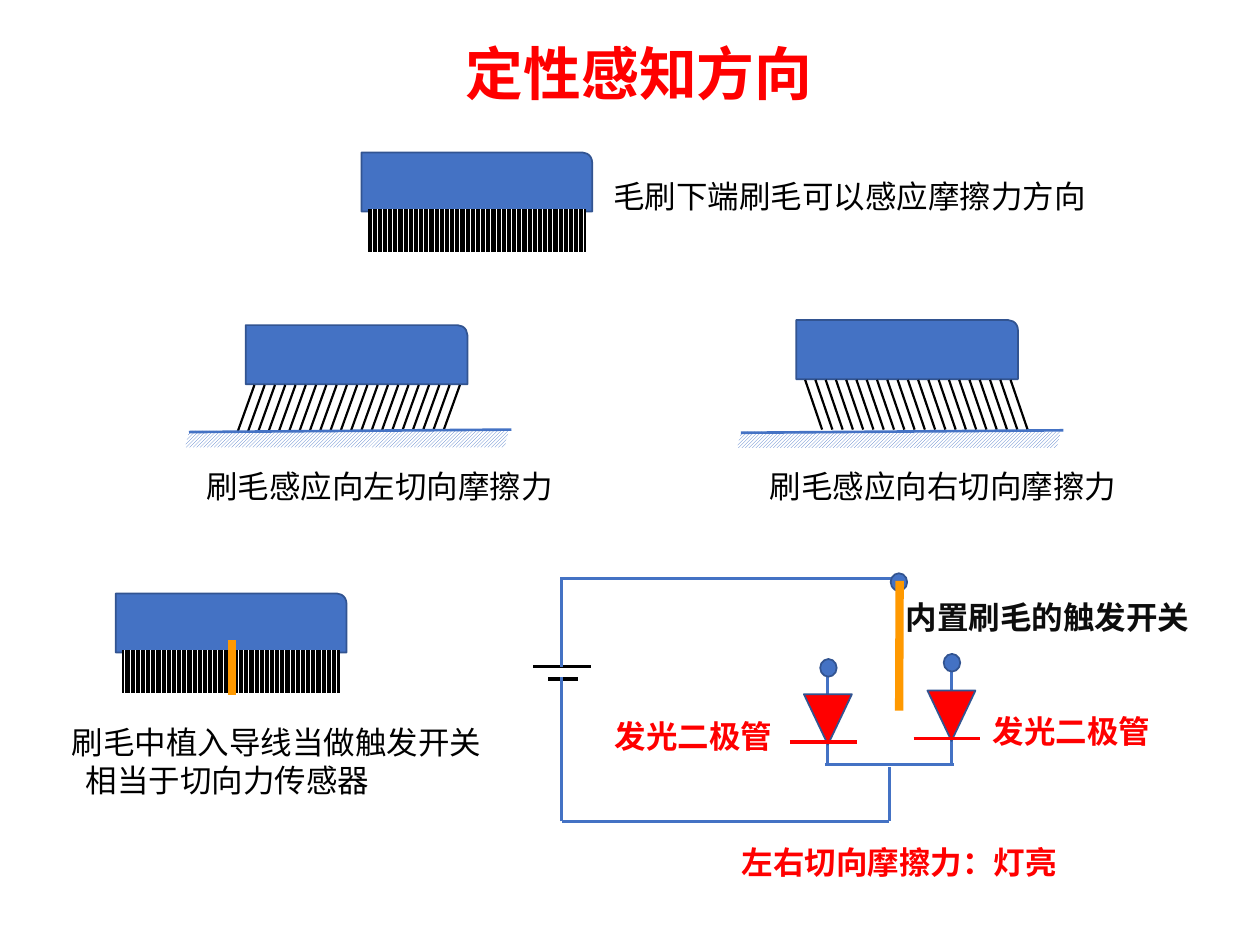
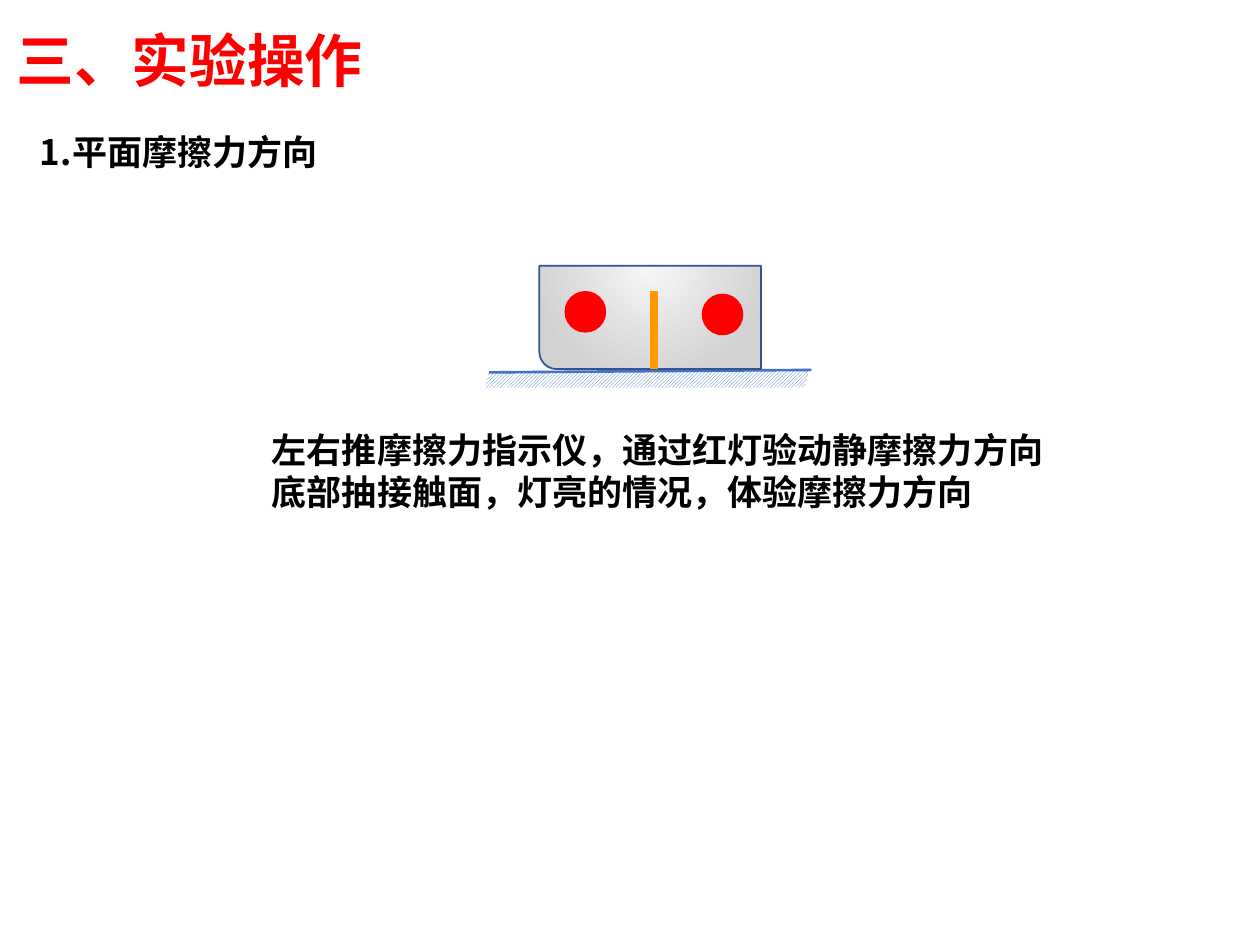
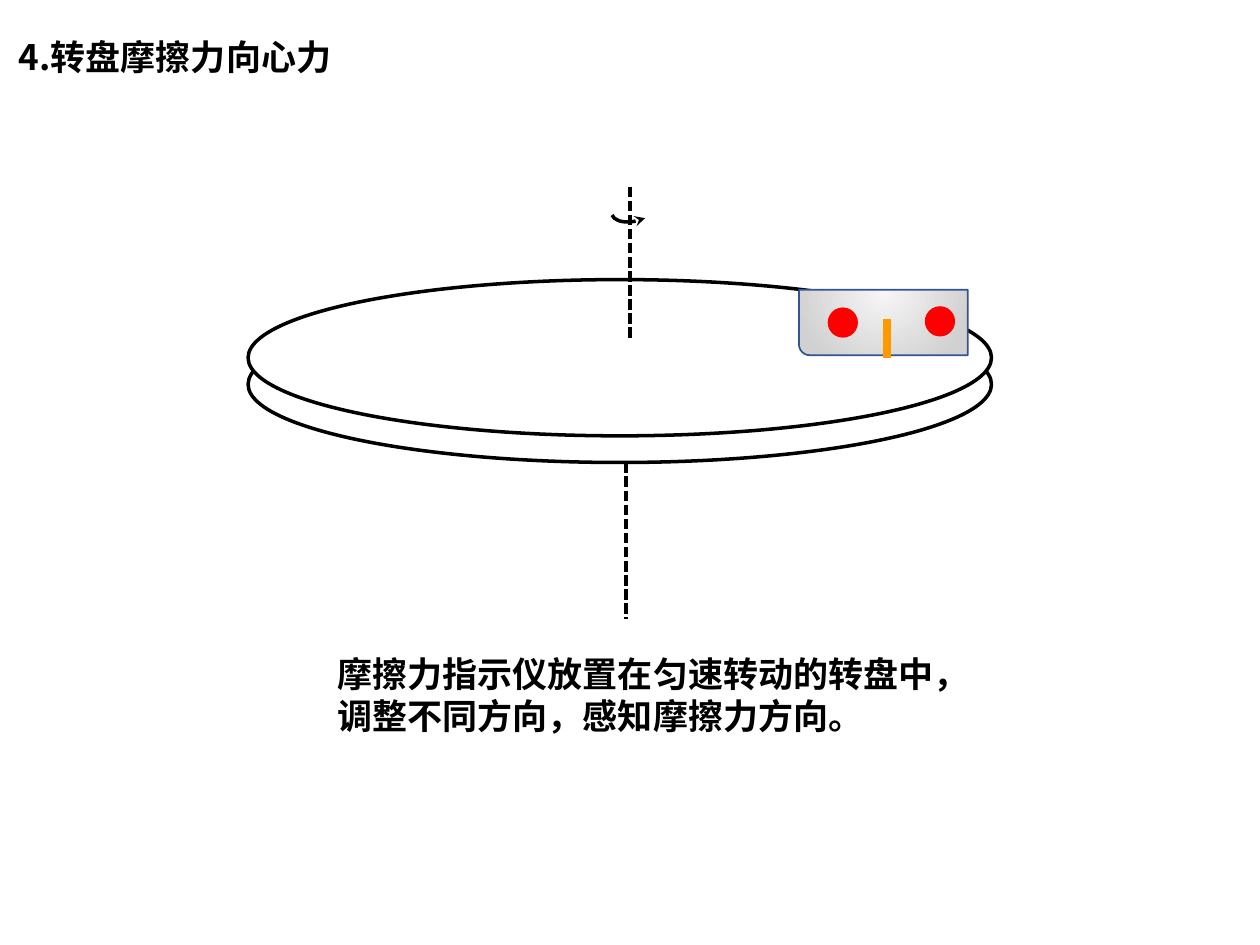
"""Build three slides on sensing the direction of friction."""

from dataclasses import dataclass

from lxml.etree import SubElement
from pptx import Presentation
from pptx.dml.color import RGBColor
from pptx.enum.dml import MSO_LINE, MSO_PATTERN
from pptx.enum.shapes import MSO_CONNECTOR, MSO_SHAPE
from pptx.enum.text import MSO_ANCHOR, MSO_AUTO_SIZE
from pptx.oxml.ns import qn
from pptx.shapes.autoshape import Shape
from pptx.shapes.connector import Connector
from pptx.slide import Slide
from pptx.util import Pt

BLUE = RGBColor(0x44, 0x72, 0xC4)
NAVY = RGBColor(0x32, 0x54, 0x91)
RED = RGBColor(0xFF, 0x00, 0x00)
ORANGE = RGBColor(0xFF, 0x99, 0x00)
BLACK = RGBColor(0x00, 0x00, 0x00)
INK = RGBColor(0x0D, 0x0D, 0x0D)
WHITE = RGBColor(0xFF, 0xFF, 0xFF)
LIGHT = RGBColor(0xF6, 0xF6, 0xF6)
GREY = RGBColor(0xD2, 0xD1, 0xD1)
FONT = "Noto Sans CJK SC"


@dataclass(frozen=True)
class Box:
    left: float
    top: float
    width: float
    height: float


@dataclass(frozen=True)
class Label:
    box: Box
    lines: tuple[str, ...]
    size: float = 18
    color: RGBColor = BLACK
    bold: bool = False
    wrap: bool = False
    indent: float = 0


@dataclass(frozen=True)
class Wire:
    x1: float
    y1: float
    x2: float
    y2: float
    color: RGBColor = BLUE
    width: float = 1.75


@dataclass(frozen=True)
class Bent:
    body: Box
    first: float
    foot: float
    lean: float


@dataclass(frozen=True)
class Meter:
    body: Box
    wire: Wire
    lamps: tuple[tuple[float, float], ...]
    lamp: float


def add_shape(slide: Slide, kind: MSO_SHAPE, box: Box, fill: RGBColor | None = None,
              line: RGBColor | None = None, width: float = 1, turn: float = 0) -> Shape:
    shape = slide.shapes.add_shape(
        kind, Pt(box.left), Pt(box.top), Pt(box.width), Pt(box.height))
    shape.shadow.inherit = False
    shape.rotation = turn
    if fill is None:
        shape.fill.background()
    else:
        shape.fill.solid()
        shape.fill.fore_color.rgb = fill
    if line is None:
        shape.line.fill.background()
    else:
        shape.line.color.rgb = line
        shape.line.width = Pt(width)
    return shape


def add_hatch(slide: Slide, kind: MSO_SHAPE, box: Box,
              pattern: MSO_PATTERN, color: RGBColor) -> None:
    fill = add_shape(slide, kind, box).fill
    fill.patterned()
    fill.pattern = pattern
    fill.fore_color.rgb = color
    fill.back_color.rgb = WHITE


def add_wire(slide: Slide, wire: Wire) -> Connector:
    line = slide.shapes.add_connector(
        MSO_CONNECTOR.STRAIGHT, Pt(wire.x1), Pt(wire.y1), Pt(wire.x2), Pt(wire.y2))
    line.line.color.rgb = wire.color
    line.line.width = Pt(wire.width)
    SubElement(line._element.spPr, qn("a:effectLst"))
    return line


def add_label(slide: Slide, label: Label) -> Shape:
    box = label.box
    shape = slide.shapes.add_textbox(
        Pt(box.left), Pt(box.top), Pt(box.width), Pt(box.height))
    frame = shape.text_frame
    frame.word_wrap = label.wrap
    frame.auto_size = MSO_AUTO_SIZE.SHAPE_TO_FIT_TEXT
    for i, line in enumerate(label.lines):
        para = frame.add_paragraph() if i else frame.paragraphs[0]
        if i and label.indent:
            para._p.get_or_add_pPr().set("marL", str(Pt(label.indent)))
        run = para.add_run()
        run.text = line
        run.font.size = Pt(label.size)
        run.font.bold = label.bold
        run.font.color.rgb = label.color
        run.font.name = FONT
        SubElement(run._r.get_or_add_rPr(), qn("a:ea"), typeface=FONT)
    return shape


def add_title(slide: Slide, text: str, left: float, top: float, width: float) -> None:
    box = Box(left, top, width, 82.8)
    frame = add_label(slide, Label(box, (text,), 33, RED, True, True)).text_frame
    frame.auto_size = MSO_AUTO_SIZE.NONE
    frame.vertical_anchor = MSO_ANCHOR.MIDDLE
    frame.paragraphs[0].line_spacing = 0.9


def add_head(slide: Slide, text: str, left: float, top: float) -> None:
    add_label(slide, Label(Box(left, top, 275.8, 31.7), (text,), 20, BLACK, True, True))


def add_brush(slide: Slide, left: float, top: float) -> None:
    add_shape(slide, MSO_SHAPE.ROUND_1_RECTANGLE,
              Box(left, top, 131.8, 33.8), BLUE, NAVY)
    add_hatch(slide, MSO_SHAPE.FLOWCHART_PROCESS,
              Box(left + 3.6, top + 32.4, 124.6, 24.5), MSO_PATTERN.DARK_VERTICAL, BLACK)


def add_bent(slide: Slide, bent: Bent) -> None:
    add_shape(slide, MSO_SHAPE.ROUND_1_RECTANGLE, bent.body, BLUE, NAVY)
    top = bent.body.top + bent.body.height + 0.4
    for i in range(21):
        x = bent.first + 5.87 * i
        add_wire(slide, Wire(x, top, x + bent.lean, bent.foot, BLACK, 1.25))


def add_floor(slide: Slide, left: float, top: float) -> None:
    add_hatch(slide, MSO_SHAPE.PARALLELOGRAM, Box(left, top, 185, 9.4),
              MSO_PATTERN.LIGHT_UPWARD_DIAGONAL, BLUE)
    add_wire(slide, Wire(left + 2.2, top + 0.7, left + 186.5, top - 0.7, BLUE, 1.5))


def add_node(slide: Slide, left: float, top: float) -> None:
    add_shape(slide, MSO_SHAPE.OVAL, Box(left, top, 9.4, 10.1), BLUE, NAVY)


def add_diode(slide: Slide, left: float, top: float) -> None:
    add_shape(slide, MSO_SHAPE.ISOSCELES_TRIANGLE,
              Box(left, top, 27.4, 28.8), RED, NAVY, turn=180)
    y = top + 27.4
    add_wire(slide, Wire(left - 8, y, left + 30.2, y, RED, 2.25))


def add_meter(slide: Slide, meter: Meter) -> None:
    body = add_shape(slide, MSO_SHAPE.ROUND_1_RECTANGLE, meter.body, GREY, NAVY, turn=180)
    body.fill.gradient()
    for stop, color, place in zip(body.fill.gradient_stops, (LIGHT, GREY), (0, 1)):
        stop.color.rgb = color
        stop.position = place
    grad = body._element.spPr.find(qn("a:gradFill"))
    grad.set("rotWithShape", "0")
    grad.remove(grad.find(qn("a:lin")))
    ring = SubElement(grad, qn("a:path"), path="circle")
    SubElement(ring, qn("a:fillToRect"), l="43000", t="0", r="43000", b="100000")
    add_wire(slide, meter.wire)
    for left, top in meter.lamps:
        add_shape(slide, MSO_SHAPE.OVAL, Box(left, top, meter.lamp, meter.lamp), RED)


def add_axis(slide: Slide, x: float, top: float, foot: float) -> None:
    line = add_wire(slide, Wire(x, top, x, foot, BLACK, 2))
    line.line.dash_style = MSO_LINE.SQUARE_DOT


def draw_sense(slide: Slide) -> None:
    add_title(slide, "定性感知方向", 259.2, 2.2, 235.4)
    add_brush(slide, 206.6, 87.1)
    add_bent(slide, Bent(Box(140.4, 185.8, 126.7, 33.8), 145.4, 247, -9.7))
    add_bent(slide, Bent(Box(455, 182.9, 126.7, 33.8), 460.1, 245.5, 9.7))
    add_floor(slide, 105.8, 246.2)
    add_floor(slide, 421.2, 246.6)
    add_brush(slide, 66.2, 339.1)
    wires = (
        Wire(132.5, 365.8, 132.5, 397.4, ORANGE, 4.75),
        Wire(304.6, 380.9, 337.7, 380.9, BLACK, 2),
        Wire(313.2, 388.1, 330.5, 388.1, BLACK, 2),
        Wire(321.1, 469.4, 321.1, 386.6),
        Wire(321.1, 380.9, 321.1, 329.8),
        Wire(321.8, 330.5, 509, 330.5),
        Wire(321.1, 469.4, 508.3, 469.4),
        Wire(508.3, 469.4, 508.3, 438.5),
        Wire(471.6, 437, 545, 437),
        Wire(473, 436.3, 473, 380.9),
        Wire(543.6, 436.3, 543.6, 380.9),
    )
    for wire in wires:
        add_wire(slide, wire)
    for left, top in ((509, 327.6), (468.7, 376.6), (539.3, 373.7)):
        add_node(slide, left, top)
    add_wire(slide, Wire(514.1, 331.9, 513.8, 406.1, ORANGE, 4.75))
    add_diode(slide, 530, 394.6)
    add_diode(slide, 459.4, 396.7)
    labels = (
        Label(Box(343.4, 97.9, 287.3, 28.8), ("毛刷下端刷毛可以感应摩擦力方向",)),
        Label(Box(110.9, 263.5, 214.6, 28.8), ("刷毛感应向左切向摩擦力",)),
        Label(Box(432.7, 263.5, 214.6, 28.8), ("刷毛感应向右切向摩擦力",)),
        Label(Box(33.8, 409.7, 250.6, 51.1),
              ("刷毛中植入导线当做触发开关", "相当于切向力传感器"), indent=8.2),
        Label(Box(560.2, 403.2, 105.1, 28.8), ("发光二极管",), color=RED, bold=True),
        Label(Box(344.2, 406.1, 105.1, 28.8), ("发光二极管",), color=RED, bold=True),
        Label(Box(510.5, 338.4, 180.7, 28.8), ("内置刷毛的触发开关",), color=INK, bold=True),
        Label(Box(416.9, 478.1, 196.6, 28.8), ("左右切向摩擦力：灯亮",), color=RED, bold=True),
    )
    for label in labels:
        add_label(slide, label)


def draw_plane(slide: Slide) -> None:
    add_title(slide, "三、实验操作", 2.2, -5, 517.7)
    add_head(slide, "1.平面摩擦力方向", 15.8, 71.3)
    add_label(slide, Label(
        Box(148.3, 241.2, 496.8, 55.4),
        ("左右推摩擦力指示仪，通过红灯验动静摩擦力方向",
         "底部抽接触面，灯亮的情况，体验摩擦力方向"), 20, BLACK, True, True))
    add_floor(slide, 277.2, 212.1)
    add_meter(slide, Meter(
        Box(308.2, 151.9, 126.7, 59), Wire(373.7, 166.3, 373.7, 211, ORANGE, 4.75),
        ((322.6, 166.3), (401, 167.8)), 23.8))


def draw_disc(slide: Slide) -> None:
    add_head(slide, "4.转盘摩擦力向心力", 3.6, 16.6)
    for top, fill in ((175, None), (159.8, WHITE)):
        add_shape(slide, MSO_SHAPE.OVAL, Box(141.8, top, 424.8, 89.3), fill, BLACK, 2)
    add_meter(slide, Meter(
        Box(456.5, 165.6, 96.5, 37.4), Wire(506.9, 182.2, 506.9, 204.5, ORANGE, 4.75),
        ((473, 175.7), (528.5, 175)), 17.3))
    add_axis(slide, 360, 106.6, 193)
    add_axis(slide, 357.8, 264.2, 353.5)
    spin = add_shape(slide, MSO_SHAPE.ARC, Box(348.5, 108, 33.8, 17.3),
                     line=BLACK, width=2, turn=158.3)
    SubElement(spin.line._get_or_add_ln(), qn("a:headEnd"), type="stealth")
    add_label(slide, Label(
        Box(185.8, 369.4, 377.3, 55.4),
        ("摩擦力指示仪放置在匀速转动的转盘中，调整不同方向，感知摩擦力方向。",),
        20, BLACK, True, True))


def main() -> None:
    deck = Presentation()
    deck.slide_width = Pt(720)
    deck.slide_height = Pt(540)
    for draw in (draw_sense, draw_plane, draw_disc):
        draw(deck.slides.add_slide(deck.slide_layouts[6]))
    deck.save("out.pptx")


if __name__ == "__main__":
    main()
